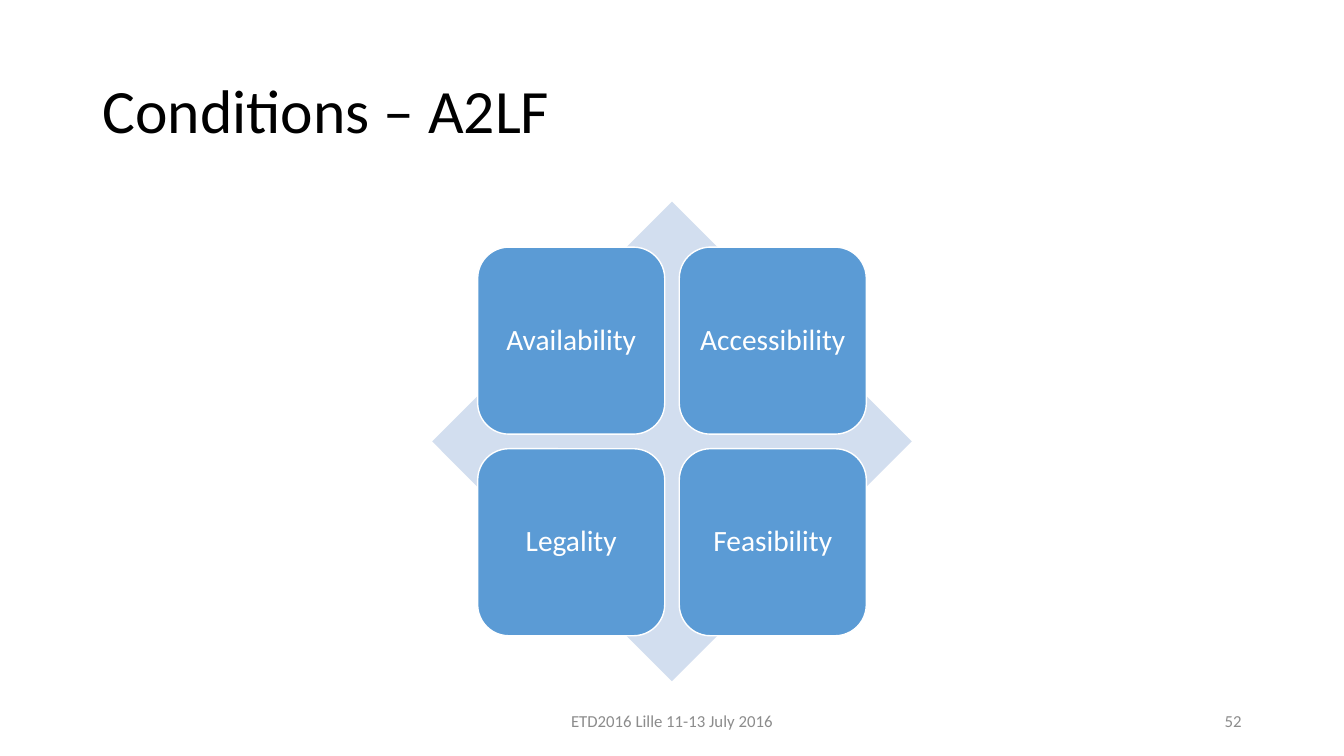
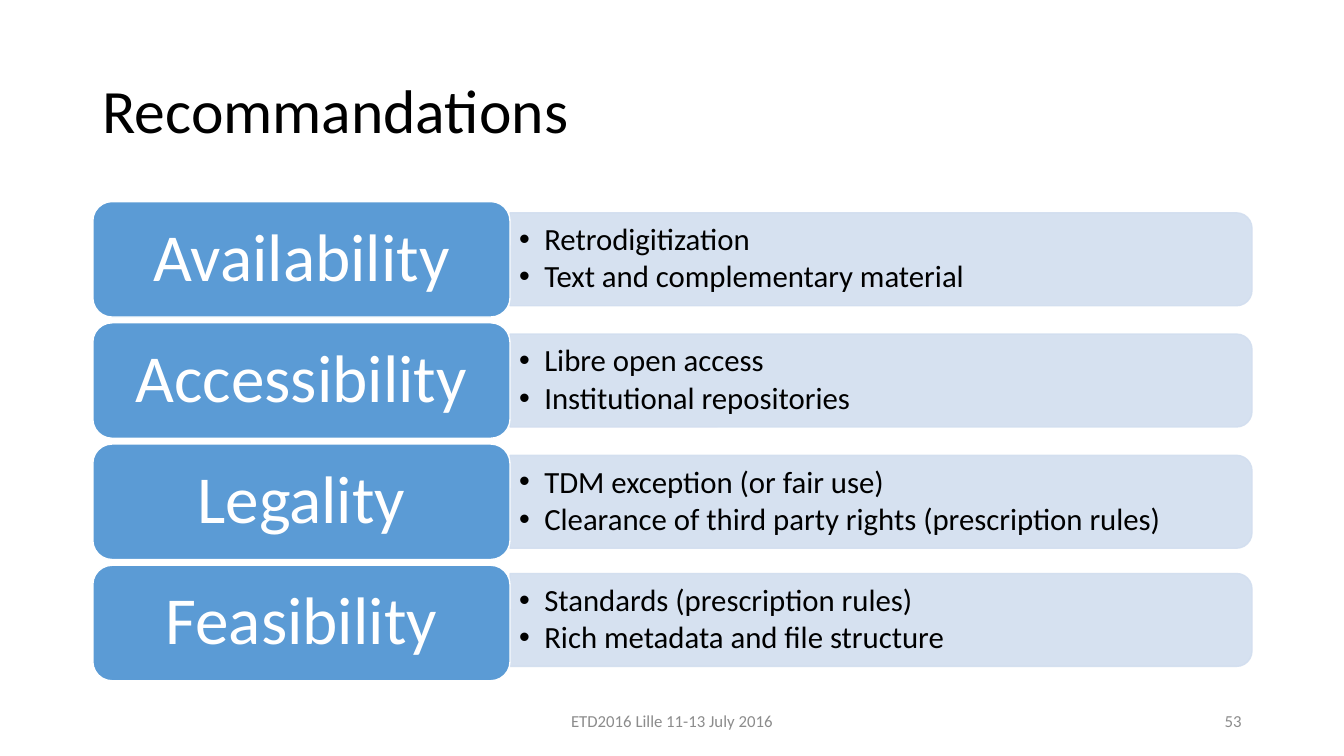
from lxml.etree import SubElement
from pptx import Presentation
from pptx.dml.color import RGBColor
from pptx.enum.shapes import MSO_SHAPE as Preset
from pptx.enum.text import MSO_ANCHOR as Anchor, MSO_AUTO_SIZE as AutoSize, PP_ALIGN as Align
from pptx.oxml.ns import qn
from pptx.util import Pt

CONDITIONS = ["Availability", "Accessibility", "Legality", "Feasibility"]
RECOMMENDATIONS = [
    ["Retrodigitization", "Text and complementary material"],
    ["Libre open access", "Institutional repositories"],
    ["TDM exception (or fair use)", "Clearance of third party rights (prescription rules)"],
    ["Standards (prescription rules)", "Rich metadata and file structure"],
]


def color(hex_string):
    return RGBColor.from_string(hex_string)


class Deck:
    FONT = "Calibri"
    BLUE, PALE, WHITE, BLACK, GRAY = "5B9BD5", "D2DEEF", "FFFFFF", "000000", "8C8C8C"

    def __init__(self):
        self.presentation = Presentation()
        self.presentation.slide_width = Pt(960)
        self.presentation.slide_height = Pt(540)
        self.slide = None

    def new_slide(self, title, number):
        self.slide = self.presentation.slides.add_slide(self.presentation.slide_layouts[5])
        shape = self.slide.shapes.title
        shape.left, shape.top, shape.width, shape.height = Pt(66), Pt(28.75), Pt(828), Pt(104.4)
        self.set_text(shape, [title], 44, self.BLACK, Align.LEFT, spacing=0.9)
        self.text_box(318, 500.5, 324, 28.8, ["ETD2016 Lille 11-13 July 2016"], 12, self.GRAY, Align.CENTER)
        self.text_box(678, 500.5, 216, 28.8, [str(number)], 12, self.GRAY, Align.RIGHT)

    def set_text(self, shape, lines, size, ink, align, spacing=1.0, inset=(7.2, 3.6), bullets=False):
        frame = shape.text_frame
        frame.text = "\n".join(lines)
        frame.word_wrap = True
        frame.auto_size = AutoSize.NONE
        frame.vertical_anchor = Anchor.MIDDLE
        frame.margin_left = frame.margin_right = Pt(inset[0])
        frame.margin_top = frame.margin_bottom = Pt(inset[1])
        for index, paragraph in enumerate(frame.paragraphs):
            paragraph.alignment = align
            paragraph.line_spacing = spacing
            paragraph.space_before = Pt(3 if index else 0)
            if bullets:
                self.add_bullet(paragraph)
            for run in paragraph.runs:
                run.font.name = self.FONT
                run.font.size = Pt(size)
                run.font.color.rgb = color(ink)

    def add_bullet(self, paragraph):
        properties = paragraph._p.get_or_add_pPr()
        properties.set("marL", str(Pt(18)))
        properties.set("indent", str(Pt(-18)))
        SubElement(properties, qn("a:buFont")).set("typeface", "Arial")
        SubElement(properties, qn("a:buChar")).set("char", "•")

    def text_box(self, left, top, width, height, lines, size, ink, align, **style):
        shape = self.slide.shapes.add_textbox(Pt(left), Pt(top), Pt(width), Pt(height))
        self.set_text(shape, lines, size, ink, align, **style)

    def block(self, preset, left, top, width, height, fill, line=None):
        shape = self.slide.shapes.add_shape(preset, Pt(left), Pt(top), Pt(width), Pt(height))
        shape.shadow.inherit = False
        shape.fill.solid()
        shape.fill.fore_color.rgb = color(fill)
        if line:
            shape.line.color.rgb = color(line)
            shape.line.width = Pt(1)
        else:
            shape.line.fill.background()
        return shape

    def label(self, left, top, width, height, text, size, inset):
        shape = self.block(Preset.ROUNDED_RECTANGLE, left, top, width, height, self.BLUE, self.WHITE)
        self.set_text(shape, [text], size, self.WHITE, Align.CENTER, spacing=0.9, inset=inset)

    def bullet_bar(self, left, middle, width, height, lines):
        center = left + width / 2
        shape = self.block(Preset.ROUND_2_SAME_RECTANGLE, center - height / 2, middle - width / 2,
                           height, width, self.PALE, self.PALE)
        shape.rotation = 90
        for tint in list(shape._element.spPr.iter(qn("a:srgbClr"))):
            SubElement(tint, qn("a:alpha")).set("val", "90000")
        self.text_box(left, middle - height / 2, width, height, lines, 22, self.BLACK, Align.LEFT,
                      spacing=0.9, inset=(6.5, 3.6), bullets=True)


def build_conditions(deck):
    deck.new_slide("Conditions – A2LF", 52)
    center_x, center_y, diamond, tile, pitch = 480, 315.3, 342.6, 133.6, 144
    deck.block(Preset.DIAMOND, center_x - diamond / 2, center_y - diamond / 2, diamond, diamond, deck.PALE)
    first_left = center_x - (pitch + tile) / 2
    first_top = center_y - (pitch + tile) / 2
    for index, condition in enumerate(CONDITIONS):
        row, column = divmod(index, 2)
        deck.label(first_left + column * pitch, first_top + row * pitch, tile, tile, condition, 21, (6, 6))


def build_recommendations(deck):
    deck.new_slide("Recommandations", 53)
    left, top, width, height, pitch = 66.3, 144, 298, 82.5, 86.6
    bar_raises = [0, 0, 0, 2.2]
    for index, (condition, lines) in enumerate(zip(CONDITIONS, RECOMMENDATIONS)):
        row_top = top + index * pitch
        deck.bullet_bar(left + width, row_top + height / 2 - bar_raises[index], 530, 66.4, lines)
        deck.label(left, row_top, width, height, condition, 48, (14.4, 7.2))


def main():
    deck = Deck()
    build_conditions(deck)
    build_recommendations(deck)
    deck.presentation.save("out.pptx")


if __name__ == "__main__":
    main()
